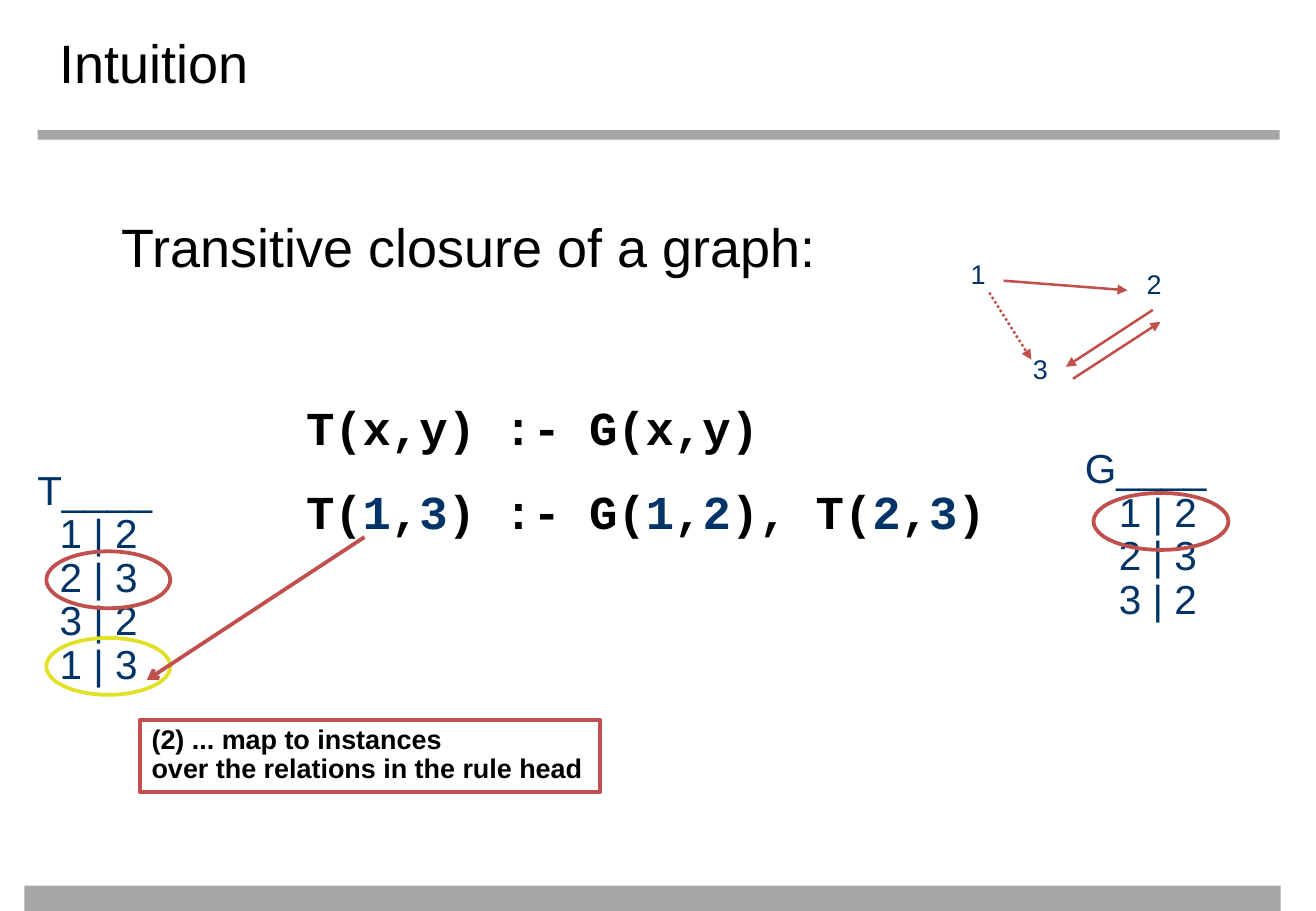
from itertools import groupby

from lxml import etree
from pptx import Presentation
from pptx.dml.color import RGBColor
from pptx.enum.dml import MSO_LINE
from pptx.enum.shapes import MSO_CONNECTOR, MSO_SHAPE
from pptx.enum.text import MSO_ANCHOR, PP_ALIGN
from pptx.oxml.ns import qn
from pptx.util import Cm, Pt

RECTANGLE = MSO_SHAPE.RECTANGLE
OVAL = MSO_SHAPE.OVAL
STRAIGHT = MSO_CONNECTOR.STRAIGHT
DOTTED = MSO_LINE.ROUND_DOT
LEFT = PP_ALIGN.LEFT
TOP = MSO_ANCHOR.TOP
MIDDLE = MSO_ANCHOR.MIDDLE

BLACK = RGBColor(0x00, 0x00, 0x00)
GRAY = RGBColor(0xA6, 0xA6, 0xA6)
NAVY = RGBColor(0x00, 0x33, 0x66)
RED = RGBColor(0xC0, 0x50, 0x4D)
YELLOW = RGBColor(0xE1, 0xE1, 0x2A)


def write_text(shape, text, size, color, spacing, bold=False):
    text_frame = shape.text_frame
    text_frame.text = text
    text_frame.vertical_anchor = TOP
    for paragraph in text_frame.paragraphs:
        paragraph.alignment = LEFT
        paragraph.line_spacing = spacing
        for run in paragraph.runs:
            run.font.name = "Arial"
            run.font.size = Pt(size)
            run.font.bold = bold
            run.font.color.rgb = color
    return text_frame


def add_arrow(start_x, start_y, end_x, end_y, width, head):
    arrow = slide.shapes.add_connector(
        STRAIGHT, Cm(start_x), Cm(start_y), Cm(end_x), Cm(end_y))
    arrow.line.color.rgb = RED
    arrow.line.width = Pt(width)
    etree.SubElement(arrow.line._get_or_add_ln(), qn("a:tailEnd"), type=head)
    etree.SubElement(arrow._element.spPr, qn("a:effectLst"))
    return arrow


presentation = Presentation()
presentation.slide_width = Cm(27.51)
presentation.slide_height = Cm(19.05)
slide = presentation.slides.add_slide(presentation.slide_layouts[5])

for left, top, width, height in [(0.51, 18.52, 26.26, 0.53), (0.79, 2.72, 25.96, 0.2)]:
    bar = slide.shapes.add_shape(RECTANGLE, Cm(left), Cm(top), Cm(width), Cm(height))
    bar.shadow.inherit = False
    bar.fill.solid()
    bar.fill.fore_color.rgb = GRAY
    bar.line.fill.background()

title = slide.shapes.title
title.left, title.top, title.width, title.height = Cm(1.07), Cm(0.66), Cm(25.4), Cm(1.42)
title_frame = write_text(title, "Intuition", 32, BLACK, 0.92)
title_frame.vertical_anchor = MIDDLE
title_frame.margin_left = title_frame.margin_right = Cm(0.18)
title_frame.margin_top = title_frame.margin_bottom = Cm(0.08)

heading = slide.shapes.add_textbox(Cm(2.29), Cm(4.34), Cm(23.42), Cm(1.6))
write_text(heading, "Transitive closure of a graph:", 32, BLACK, 1.0).word_wrap = True

rules = slide.shapes.add_textbox(Cm(6.15), Cm(8.2), Cm(15.5), Cm(3.2))
rules_frame = rules.text_frame
rules_frame.word_wrap = True
first_rule = rules_frame.paragraphs[0]
second_rule = rules_frame.add_paragraph()
second_rule.space_before = Pt(16.3)
for paragraph, rule in [(first_rule, "T(x,y) :- G(x,y)"),
                        (second_rule, "T(1,3) :- G(1,2), T(2,3)")]:
    for is_constant, characters in groupby(rule, str.isdigit):
        run = paragraph.add_run()
        run.text = "".join(characters)
        run.font.name = "Courier New"
        run.font.size = Pt(28)
        run.font.bold = True
        run.font.color.rgb = NAVY if is_constant else BLACK

relations = [
    (22.43, 9.25, 4.0, 0.71, ["G____", "1 | 2", "2 | 3", "3 | 2"]),
    (0.53, 9.7, 4.9, 0.47, ["T____", "1 | 2", "2 | 3", "3 | 2", "1 | 3"]),
]
for left, top, height, indent, lines in relations:
    relation = slide.shapes.add_textbox(Cm(left), Cm(top), Cm(3.53), Cm(height))
    relation_frame = write_text(relation, "\n".join(lines), 24, NAVY, Pt(25.8))
    relation_frame.word_wrap = True
    for paragraph in relation_frame.paragraphs[1:]:
        paragraph._p.get_or_add_pPr().set("marL", str(Cm(indent)))

for left, top, width, color in [(22.86, 10.31, 2.82, RED),
                                (0.97, 11.53, 2.59, RED),
                                (0.97, 13.34, 2.59, YELLOW)]:
    highlight = slide.shapes.add_shape(OVAL, Cm(left), Cm(top), Cm(width), Cm(1.19))
    highlight.shadow.inherit = False
    highlight.fill.background()
    highlight.line.color.rgb = color
    highlight.line.width = Pt(2.25)

callout = slide.shapes.add_shape(RECTANGLE, Cm(2.92), Cm(15.06), Cm(9.63), Cm(1.5))
callout.shadow.inherit = False
callout.fill.background()
callout.line.color.rgb = RED
callout.line.width = Pt(2.25)
callout_text = "(2) ... map to instances\nover the relations in the rule head"
write_text(callout, callout_text, 16, BLACK, Pt(17.2), bold=True).word_wrap = False
add_arrow(7.62, 11.23, 3.07, 14.22, 2.25, "arrow")

for node, left, top in [("1", 20.04, 5.33), ("2", 23.72, 5.54), ("3", 21.34, 7.32)]:
    label = slide.shapes.add_textbox(Cm(left), Cm(top), Cm(0.84), Cm(0.89))
    write_text(label, node, 16, NAVY, 0.9).word_wrap = False

for edge in [(20.98, 5.87, 23.57, 6.07), (24.1, 6.48, 22.28, 7.67), (22.43, 7.92, 24.26, 6.73)]:
    add_arrow(*edge, 1.5, "triangle")
derived_edge = add_arrow(20.68, 6.12, 21.56, 7.52, 1.5, "triangle")
derived_edge.line.dash_style = DOTTED

presentation.save("out.pptx")
